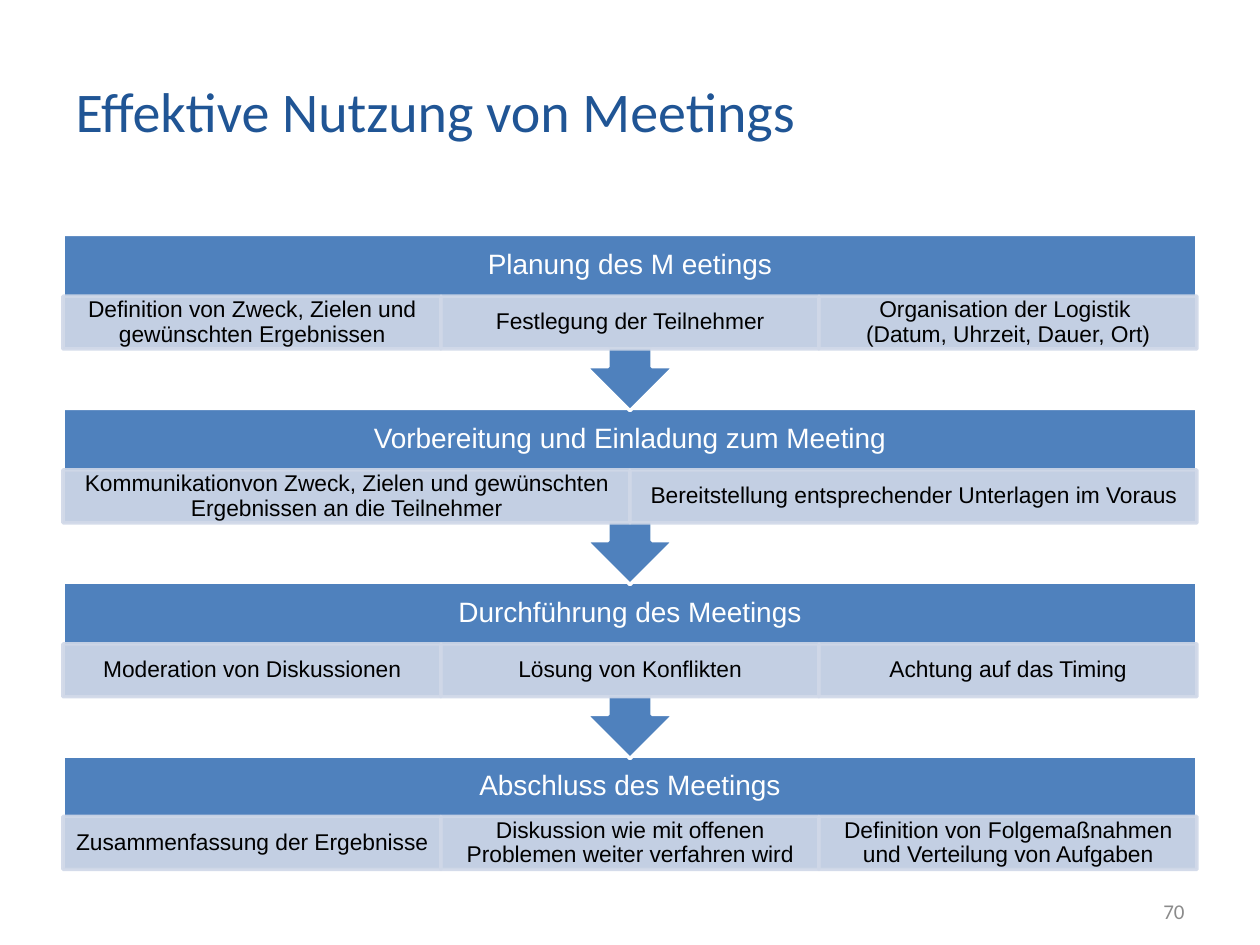
from lxml import etree
from pptx import Presentation
from pptx.dml.color import RGBColor
from pptx.enum.shapes import MSO_SHAPE
from pptx.enum.text import MSO_ANCHOR, PP_ALIGN
from pptx.oxml.ns import qn
from pptx.util import Inches, Pt

BLUE, PALE, WHITE = "4F81BD", "D0D8E8", "FFFFFF"
LEFT, WIDTH = 0.5, 9
TOP, STEP = 1.86, 1.38
HEADING_HEIGHT, DETAIL_HEIGHT = 0.49, 0.42

HEADING = {"size": Pt(16), "name": "Arial", "color": WHITE}
DETAIL = {"size": Pt(13), "name": "Arial", "color": "000000"}
TITLE = {"size": Pt(32), "name": "Calibri", "color": "205595"}
NUMBER = {"size": Pt(12), "name": "Calibri", "color": "8B8B8B"}

STAGES = [
    ("Planung des M eetings", [
        "Definition von Zweck, Zielen und gewünschten Ergebnissen",
        "Festlegung der Teilnehmer",
        "Organisation der Logistik \n(Datum, Uhrzeit, Dauer, Ort)"]),
    ("Vorbereitung und Einladung zum Meeting", [
        "Kommunikationvon Zweck, Zielen und gewünschten Ergebnissen an die Teilnehmer",
        "Bereitstellung entsprechender Unterlagen im Voraus"]),
    ("Durchführung des Meetings", [
        "Moderation von Diskussionen",
        "Lösung von Konflikten",
        "Achtung auf das Timing"]),
    ("Abschluss des Meetings", [
        "Zusammenfassung der Ergebnisse",
        "Diskussion wie mit offenen Problemen weiter verfahren wird",
        "Definition von Folgemaßnahmen und Verteilung von Aufgaben"]),
]


def paint(shape, fill, line, opacity=100):
    shape.shadow.inherit = False
    shape.line.width = Pt(2)
    for target, color in ((shape.fill, fill), (shape.line.fill, line)):
        target.solid()
        target.fore_color.rgb = RGBColor.from_string(color)
    if opacity < 100:
        for color in shape._element.spPr.iter(qn("a:srgbClr")):
            etree.SubElement(color, qn("a:alpha")).set("val", str(opacity * 1000))


def write(shape, text, style, align=PP_ALIGN.CENTER, margins=(0.1, 0.05), spacing=None):
    frame = shape.text_frame
    frame.word_wrap = True
    frame.vertical_anchor = MSO_ANCHOR.MIDDLE
    frame.margin_left = frame.margin_right = Inches(margins[0])
    frame.margin_top = frame.margin_bottom = Inches(margins[1])
    paragraph = frame.paragraphs[0]
    paragraph.text = text
    paragraph.alignment = align
    paragraph.line_spacing = spacing
    for run in paragraph.runs:
        for name, value in style.items():
            if name == "color":
                run.font.color.rgb = RGBColor.from_string(value)
            else:
                setattr(run.font, name, value)


presentation = Presentation()
presentation.slide_width, presentation.slide_height = Inches(10), Inches(7.5)
slide = presentation.slides.add_slide(presentation.slide_layouts[5])
shapes = slide.shapes

# Title
title = shapes.title
title.left, title.top = Inches(LEFT), Inches(0.3)
title.width, title.height = Inches(8.04), Inches(1.15)
write(title, "Effektive Nutzung von Meetings", TITLE, PP_ALIGN.LEFT)

# Slide number
number = shapes.add_textbox(Inches(7.17), Inches(7.03), Inches(2.33), Inches(0.4))
write(number, "70", NUMBER, PP_ALIGN.RIGHT)

# Stages, from the bottom up so that each arrow lies over the next stage
last = len(STAGES) - 1
for index, (heading, details) in reversed(list(enumerate(STAGES))):
    top = TOP + index * STEP

    # Band: the last stage has no arrow
    kind = MSO_SHAPE.RECTANGLE if index == last else MSO_SHAPE.UP_ARROW_CALLOUT
    height = 0.91 if index == last else 1.4
    band = shapes.add_shape(kind, Inches(LEFT), Inches(top), Inches(WIDTH), Inches(height))
    band.rotation = 0 if index == last else 180
    paint(band, BLUE, WHITE)

    # Heading
    label = shapes.add_textbox(Inches(LEFT), Inches(top), Inches(WIDTH), Inches(HEADING_HEIGHT))
    write(label, heading, HEADING, margins=(0.12, 0.12), spacing=0.9)

    # Details in equal columns
    column = WIDTH / len(details)
    detail_top = top + (0.48 if index == last else HEADING_HEIGHT)
    for position, detail in enumerate(details):
        box = shapes.add_shape(MSO_SHAPE.RECTANGLE, Inches(LEFT + position * column),
                               Inches(detail_top), Inches(column), Inches(DETAIL_HEIGHT))
        paint(box, PALE, PALE, opacity=90)
        write(box, detail, DETAIL, margins=(0.1, 0.02), spacing=0.9)

presentation.save("out.pptx")
